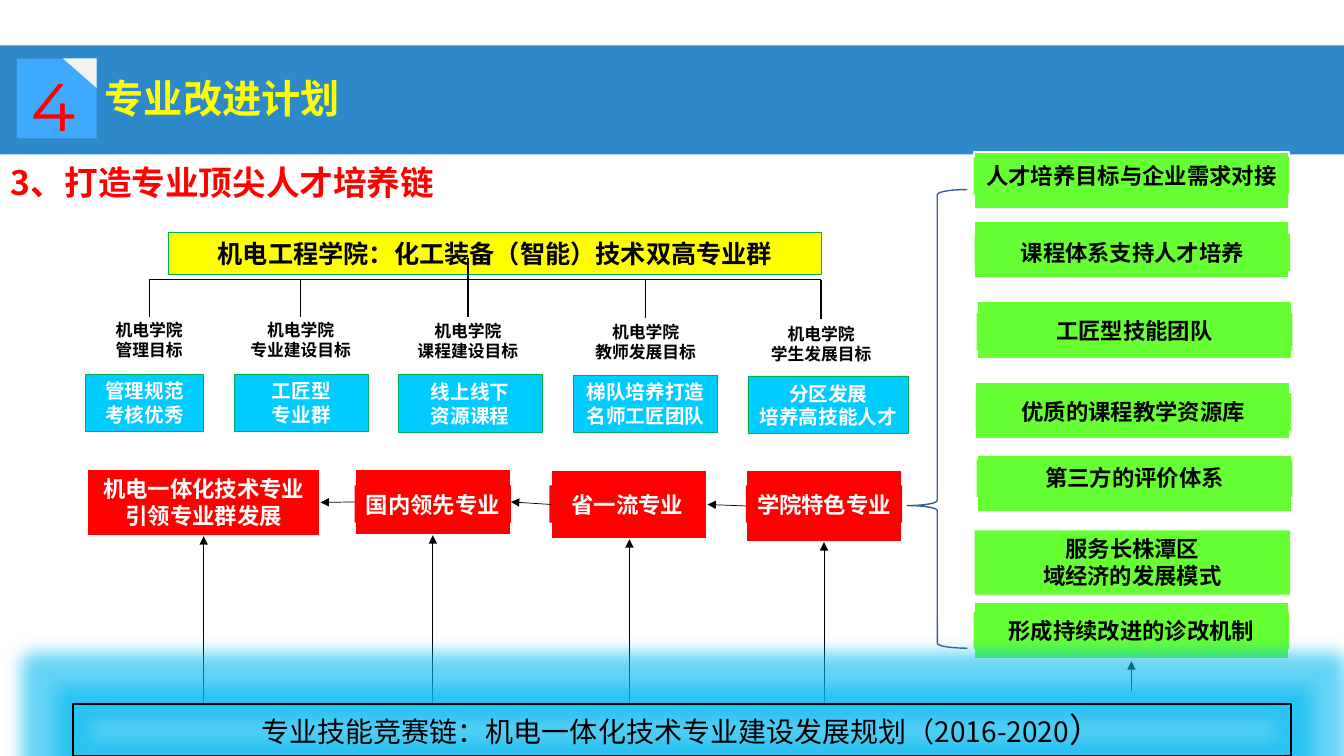
import pptx
import pptx.util
import pptx.dml.color
import pptx.enum.shapes
import pptx.enum.text
import pptx.oxml
import pptx.oxml.ns
from collections import namedtuple

Pt = pptx.util.Pt
RGB = pptx.dml.color.RGBColor
KIND = pptx.enum.shapes.MSO_SHAPE
STRAIGHT = pptx.enum.shapes.MSO_CONNECTOR.STRAIGHT
ALIGN = pptx.enum.text.PP_ALIGN
ANCHOR = pptx.enum.text.MSO_ANCHOR
qn = pptx.oxml.ns.qn
DRAW = pptx.oxml.ns.nsdecls("a")

BLACK = RGB(0, 0, 0)
WHITE = RGB(255, 255, 255)
RED = RGB(255, 0, 0)
YELLOW = RGB(255, 255, 0)
GREEN = RGB(0x66, 0xFF, 0x33)
EDGE = RGB(0x00, 0xB0, 0x50)
CYAN = RGB(0x00, 0xCC, 0xFF)
BAND = RGB(0x00, 0x70, 0xC0)
BADGE = RGB(0x3F, 0xA9, 0xFD)
FOLD = RGB(0xF2, 0xF2, 0xF2)
BRACE = RGB(0x37, 0x60, 0x92)
NOTO = "Noto Sans CJK SC"

Box = namedtuple("Box", "left top width height")


def write(shape, text, size=16, color=BLACK, bold=True, font=NOTO, align=ALIGN.CENTER,
          anchor=ANCHOR.MIDDLE, wrap=True, inset=(7.2, 3.6), last=None):
    """Fill a shape with text, one paragraph a line; last sizes the final letter."""
    frame = shape.text_frame
    frame.auto_size = pptx.enum.text.MSO_AUTO_SIZE.NONE
    frame.word_wrap = wrap
    frame.vertical_anchor = anchor
    frame.margin_left = frame.margin_right = Pt(inset[0])
    frame.margin_top = frame.margin_bottom = Pt(inset[1])
    for index, line in enumerate(text.split("\n")):
        para = frame.add_paragraph() if index else frame.paragraphs[0]
        para.alignment = align
        parts = [(line[:-1], size), (line[-1], last)] if last else [(line, size)]
        for part, points in parts:
            run = para.add_run()
            run.text = part
            run.font.size = Pt(points)
            run.font.bold = bold
            run.font.color.rgb = color
            run.font.name = font
            east = pptx.oxml.parse_xml(f'<a:ea {DRAW} typeface="{font}"/>')
            run.font._element.find(qn("a:latin")).addnext(east)


def draw(host, box, fill=None, edge=None, weight=0.5, kind=KIND.RECTANGLE):
    """Add a flat preset shape."""
    shape = host.add_shape(kind, *map(Pt, box))
    shape.shadow.inherit = False
    if fill is None:
        shape.fill.background()
    else:
        shape.fill.solid()
        shape.fill.fore_color.rgb = fill
    if edge is None:
        shape.line.fill.background()
    else:
        shape.line.color.rgb = edge
        shape.line.width = Pt(weight)
    return shape


def link(host, start, end, weight=0.5, arrow=True):
    """Add a straight black line, with an arrowhead at its end if asked."""
    line = host.add_connector(STRAIGHT, *map(Pt, start + end))
    line.line.color.rgb = BLACK
    line.line.width = Pt(weight)
    if arrow:
        line.line._get_or_add_ln().append(
            pptx.oxml.parse_xml(f'<a:tailEnd {DRAW} type="triangle"/>'))
    line._element.spPr.append(pptx.oxml.parse_xml(f"<a:effectLst {DRAW}/>"))
    return line


def header(slide, box):
    """Draw the blue band with its numbered badge and the slide title."""
    band = draw(slide.shapes, box, BAND)
    tint = band.element.spPr.find(qn("a:solidFill"))[0]
    tint.append(pptx.oxml.parse_xml(f'<a:alpha {DRAW} val="82000"/>'))
    title = slide.shapes.title
    title.element.addprevious(band.element)
    title.left, title.top = Pt(box.left + 67.7), Pt(box.top + 18.7)
    title.width, title.height = Pt(320), Pt(38)
    write(title, "专业改进计划", size=28, color=YELLOW, align=ALIGN.LEFT)
    badge = slide.shapes.add_group_shape().shapes
    left, top = box.left + 12, box.top + 9.4
    draw(badge, (left, top, 57, 57), BADGE)
    fold = draw(badge, (left + 33, top, 24, 21), FOLD, kind=KIND.RIGHT_TRIANGLE)
    fold.rotation = 180
    digit = badge.add_textbox(Pt(left + 10), Pt(top + 4), Pt(45), Pt(58))
    write(digit, "4", size=48, color=RED, bold=False, font="Montserrat",
          align=ALIGN.LEFT, anchor=ANCHOR.TOP, inset=(0, 0))


def heading(slide, box):
    """Write the red section heading."""
    area = slide.shapes.add_textbox(*map(Pt, box))
    write(area, "3、打造专业顶尖人才培养链", size=24, color=RED, align=ALIGN.LEFT,
          anchor=ANCHOR.TOP, inset=(6.5, 3))


def tree(slide, box):
    """Draw the major group and its five goals with their results."""
    root = draw(slide.shapes, (box.left + 59, box.top, 466.6, 29.5), YELLOW, EDGE)
    write(root, "机电工程学院：化工装备（智能）技术双高专业群", size=18)
    goals = [
        ("管理", 45.4, 0, 0, 84, "管理规范\n考核优秀"),
        ("专业建设", 153.6, 0, 106, 96, "工匠型\n专业群"),
        ("课程建设", 273, 0.8, 223.2, 103, "线上线下\n资源课程"),
        ("教师发展", 400, 1.5, 348.5, 103, "梯队培养打造名师工匠团队"),
        ("学生发展", 525.4, 3, 473, 115, "分区发展\n培养高技能人才"),
    ]
    lines = slide.shapes.add_group_shape().shapes
    rail = box.top + 33.4
    for goal, mid, drop, left, width, result in goals:
        area = draw(slide.shapes, (box.left + left, box.top + 101 + drop / 2, width, 41),
                    CYAN, EDGE)
        write(area, result, size=14, color=WHITE, font="Arial")
        label = slide.shapes.add_textbox(
            Pt(box.left + mid - 43.5), Pt(box.top + 58.4 + drop), Pt(87), Pt(36))
        write(label, f"机电学院\n{goal}目标", size=12, anchor=ANCHOR.TOP, wrap=False)
        stem = box.left + mid
        link(lines, (stem, rail), (stem, box.top + 60 + drop / 2), 1, False)
    middle = box.left + goals[2][1]
    link(lines, (middle, box.top + 18), (middle, rail), 1, False)
    link(lines, (box.left + goals[0][1], rail), (box.left + goals[-1][1], rail), 1, False)


def chain(slide, box):
    """Draw the red chain of majors and the arrows that feed it."""
    majors = [
        ("机电一体化技术专业\n引领专业群发展", 0, 0, 167, 48.2, None),
        ("国内领先专业", 191.4, 0, 111.6, 47.5, 191.4),
        ("省一流专业", 331.8, 0.7, 111.6, 49.7, 330.4),
        ("学院特色专业", 470.8, 0.7, 111.6, 51.8, 470.8),
    ]
    before = None
    for text, left, top, width, height, inner in majors:
        plate = draw(slide.shapes, (box.left + left, box.top + top, width, height),
                     RED, WHITE, 1.5)
        label = plate
        if inner is not None:
            label = draw(slide.shapes, (box.left + inner, box.top + 12, width, 26.6), RED)
        write(label, text, color=WHITE)
        if before is not None:
            step = link(slide.shapes, (0, 0), (0, 0))
            step.begin_connect(plate, 1)
            step.end_connect(before, 3)
        mid = box.left + left + width / 2
        feed = link(slide.shapes, (mid, box.top + box.height), (mid, box.top + height))
        feed.end_connect(plate, 2)
        before = plate


def traits(slide, box):
    """Draw the brace, the green list and the arrow below it."""
    items = [
        ("人才培养目标与企业需求对接", 0, 0, 0, 3.6),
        ("课程体系支持人才培养", 0, 49, 0.7, 9.4),
        ("工匠型技能团队", 2.2, 106.6, 0, 8),
        ("优质的课程教学资源库", 0.7, 164.2, 0.7, 8),
        ("第三方的评价体系", 2.2, 216, 0, 3.6),
        ("服务长株潭区\n域经济的发展模式", 1.4, 271.5, -0.7, -1.4),
        ("形成持续改进的诊改机制", 0, 321.1, 0, 7.2),
    ]
    for text, left, top, right, down in items:
        left, top = box.left + left, box.top + top
        draw(slide.shapes, (left, top, box.width, 41), GREEN, WHITE, 1.5)
        tall = 46 if "\n" in text else 26.6
        label = draw(slide.shapes, (left + right, top + down, box.width, tall), GREEN)
        write(label, text, anchor=ANCHOR.TOP)
    brace = draw(slide.shapes, (box.left - 47.5, box.top + 26.7, 43, 327.6),
                 edge=BRACE, weight=1, kind=KIND.LEFT_BRACE)
    brace.adjustments[0], brace.adjustments[1] = 0.083, 0.689
    mid = box.left + box.width / 2
    link(slide.shapes, (mid, box.top + 385), (mid, box.top + 363.6))


def footer(slide, box):
    """Draw the glowing frame with the contest chain."""
    frame = draw(slide.shapes, box, edge=BLACK, weight=1.5)
    frame.element.spPr.find(qn("a:effectLst")).append(pptx.oxml.parse_xml(
        f'<a:glow {DRAW} rad="{Pt(25)}"><a:srgbClr val="00B8F0">'
        '<a:alpha val="60000"/></a:srgbClr></a:glow>'))
    write(frame, "专业技能竞赛链：机电一体化技术专业建设发展规划（2016-2020）",
          size=20, bold=False, anchor=ANCHOR.TOP, last=24)


def main():
    """Build and save the slide."""
    deck = pptx.Presentation()
    deck.slide_width, deck.slide_height = Pt(960), Pt(540)
    slide = deck.slides.add_slide(deck.slide_layouts[5])
    header(slide, Box(0, 32.4, 960, 77.8))
    heading(slide, Box(1.4, 113, 391, 45))
    tree(slide, Box(61.2, 166.3, 588, 143))
    chain(slide, Box(62, 334.8, 582.4, 167.2))
    traits(slide, Box(695.5, 108.7, 225.4, 385))
    footer(slide, Box(52, 502.6, 870.5, 37.4))
    deck.save("out.pptx")


if __name__ == "__main__":
    main()
